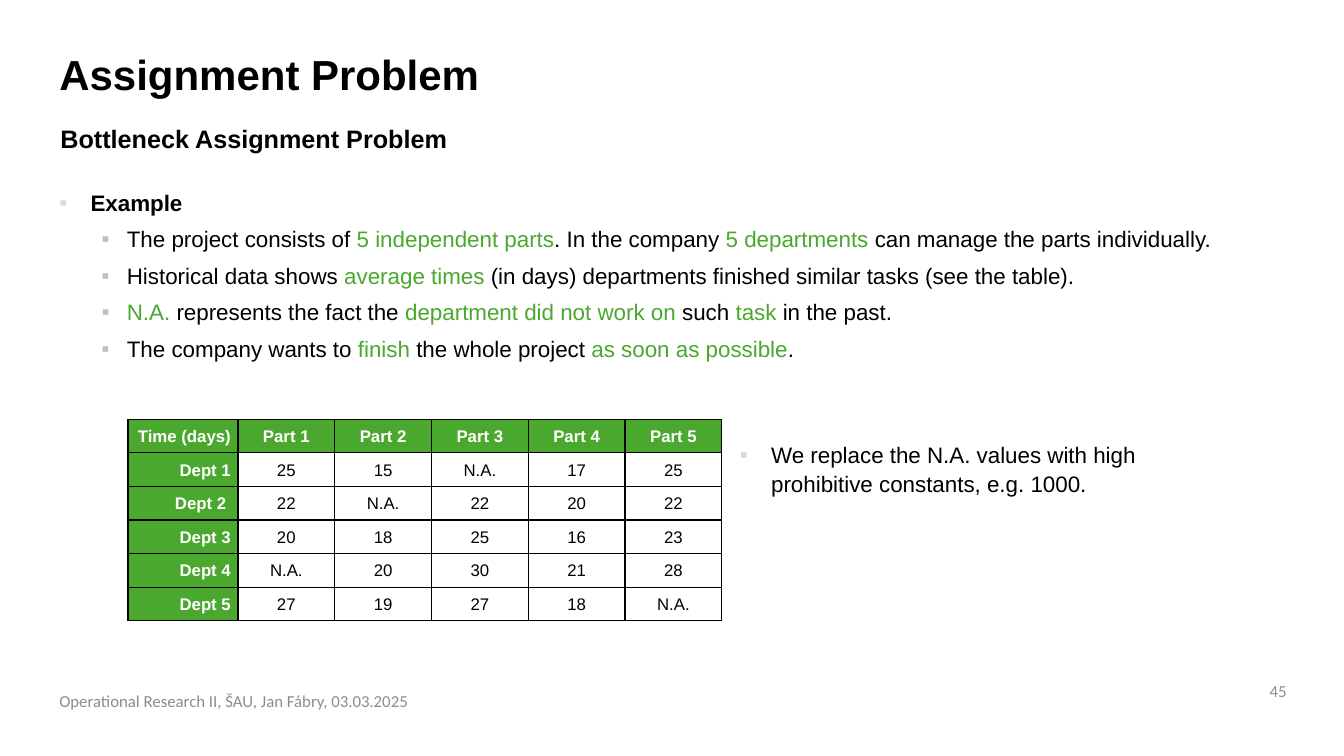
from lxml import etree
from pptx import Presentation
from pptx.dml.color import RGBColor
from pptx.enum import text
from pptx.oxml import ns
from pptx.util import Inches, Pt

BLACK = RGBColor(0x00, 0x00, 0x00)
WHITE = RGBColor(0xFF, 0xFF, 0xFF)
GREEN = RGBColor(0x4B, 0xA8, 0x2E)
GRAY = RGBColor(0x8C, 0x8C, 0x8C)
PALE_BULLET = RGBColor(0xD9, 0xD9, 0xD9)
DARK_BULLET = RGBColor(0xBF, 0xBF, 0xBF)
LEFT, CENTER, RIGHT = text.PP_ALIGN.LEFT, text.PP_ALIGN.CENTER, text.PP_ALIGN.RIGHT
MIDDLE = text.MSO_ANCHOR.MIDDLE

TITLE = "Assignment Problem"
SUBTITLE = "Bottleneck Assignment Problem"
FOOTER = "Operational Research II, ŠAU, Jan Fábry, 03.03.2025"
PAGE_NUMBER = "45"
EXAMPLE = "Example"
# Every second piece of a fact is highlighted in green.
FACTS = [
    ("The project consists of ", "5 independent parts", ". In the company ",
     "5 departments ", "can manage the parts individually."),
    ("Historical data shows ", "average times ",
     "(in days) departments finished similar tasks (see the table)."),
    ("", "N.A.", " represents the fact the ", "department did not work on",
     " such ", "task", " in the past."),
    ("The company wants to ", "finish", " the whole project ",
     "as soon as possible", "."),
]
REMARK = "We replace the N.A. values with high prohibitive constants, e.g. 1000."
TIMES = [
    ("Time (days)", "Part 1", "Part 2", "Part 3", "Part 4", "Part 5"),
    ("Dept 1", "25", "15", "N.A.", "17", "25"),
    ("Dept 2 ", "22", "N.A.", "22", "20", "22"),
    ("Dept 3", "20", "18", "25", "16", "23"),
    ("Dept 4", "N.A.", "20", "30", "21", "28"),
    ("Dept 5", "27", "19", "27", "18", "N.A."),
]
TABLE_LEFT, TABLE_TOP = 1.27, 4.16
LABEL_WIDTH, PART_WIDTH, ROW_HEIGHT = 1.09, 0.96, 1 / 3


def style(font, size, color=BLACK, bold=False, name="Arial"):
    font.name, font.size, font.bold = name, Pt(size), bold
    font.color.rgb = color


def add_box(page, left, top, width, height):
    box = page.shapes.add_textbox(*map(Inches, (left, top, width, height)))
    box.text_frame.word_wrap = True
    return box.text_frame


def add_line(page, place, words, size, color=BLACK, bold=False, name="Arial",
             align=LEFT, anchor=text.MSO_ANCHOR.TOP):
    """Add a text box holding one paragraph and return that paragraph."""
    frame = add_box(page, *place)
    frame.vertical_anchor = anchor
    para = frame.paragraphs[0]
    para.text, para.alignment = words, align
    style(para.runs[0].font, size, color, bold, name)
    return para


def set_bullet(para, color, margin, hanging):
    para.line_spacing = 1.1
    props = para._p.get_or_add_pPr()
    props.set("marL", str(Inches(margin)))
    props.set("indent", str(-Inches(hanging)))
    fill = etree.SubElement(props, ns.qn("a:buClr"))
    etree.SubElement(fill, ns.qn("a:srgbClr"), val=str(color))
    etree.SubElement(props, ns.qn("a:buFont"), typeface="Arial")
    etree.SubElement(props, ns.qn("a:buChar"), char="▪")


def add_example(page):
    frame = add_box(page, 0.49, 1.8, 11.83, 4.13)
    heading = frame.paragraphs[0]
    heading.text = EXAMPLE
    set_bullet(heading, PALE_BULLET, 0.31, 0.31)
    style(heading.runs[0].font, 16, bold=True)
    for fact in FACTS:
        para = frame.add_paragraph()
        para.level, para.space_before = 1, Pt(5)
        set_bullet(para, DARK_BULLET, 0.67, 0.25)
        for i, piece in enumerate(fact):
            if piece:
                span = para.add_run()
                span.text = piece
                style(span.font, 16, GREEN if i % 2 else BLACK)


def add_borders(cell):
    props = cell._tc.get_or_add_tcPr()
    for i, side in enumerate(("lnL", "lnR", "lnT", "lnB")):
        line = etree.Element(ns.qn("a:" + side), w=str(Pt(1)))
        fill = etree.SubElement(line, ns.qn("a:solidFill"))
        etree.SubElement(fill, ns.qn("a:srgbClr"), val=str(BLACK))
        props.insert(i, line)


def fill_cell(cell, words, is_header, align):
    cell.margin_left = cell.margin_right = Inches(0.07)
    cell.margin_top = cell.margin_bottom = 0
    cell.vertical_anchor = MIDDLE
    if is_header:
        cell.fill.solid()
        cell.fill.fore_color.rgb = GREEN
    else:
        cell.fill.background()
    add_borders(cell)
    para = cell.text_frame.paragraphs[0]
    para.text, para.alignment = words, align
    para.line_spacing, para.space_after = 1.07, Pt(8)
    style(para.runs[0].font, 12, WHITE if is_header else BLACK, is_header)


def add_times_table(page):
    widths = [LABEL_WIDTH] + [PART_WIDTH] * (len(TIMES[0]) - 1)
    table = page.shapes.add_table(
        len(TIMES), len(widths), Inches(TABLE_LEFT), Inches(TABLE_TOP),
        Inches(sum(widths)), Inches(ROW_HEIGHT * len(TIMES))).table
    for column, width in zip(table.columns, widths):
        column.width = Inches(width)
    for r, row in enumerate(TIMES):
        table.rows[r].height = Inches(ROW_HEIGHT)
        for c, words in enumerate(row):
            fill_cell(table.cell(r, c), words, r == 0 or c == 0,
                      CENTER if c else RIGHT)


def main():
    deck = Presentation()
    deck.slide_width, deck.slide_height = Inches(13.33), Inches(7.5)
    page = deck.slides.add_slide(deck.slide_layouts[6])
    add_line(page, (12.36, 6.69, 0.5, 0.33), PAGE_NUMBER, 12, GRAY,
             name="Calibri", align=RIGHT, anchor=MIDDLE)
    title = add_line(page, (0.49, 0.49, 10.13, 0.57), TITLE, 30, bold=True)
    title.line_spacing = 0.9
    add_example(page)
    add_line(page, (0.49, 6.75, 7.17, 0.4), FOOTER, 12, GRAY,
             name="Calibri", anchor=MIDDLE)
    add_line(page, (0.5, 1.17, 10.45, 0.4), SUBTITLE, 18, bold=True)
    add_times_table(page)
    remark = add_line(page, (7.24, 4.3, 4.33, 1.17), REMARK, 16)
    set_bullet(remark, PALE_BULLET, 0.31, 0.31)
    deck.save("out.pptx")


if __name__ == "__main__":
    main()
